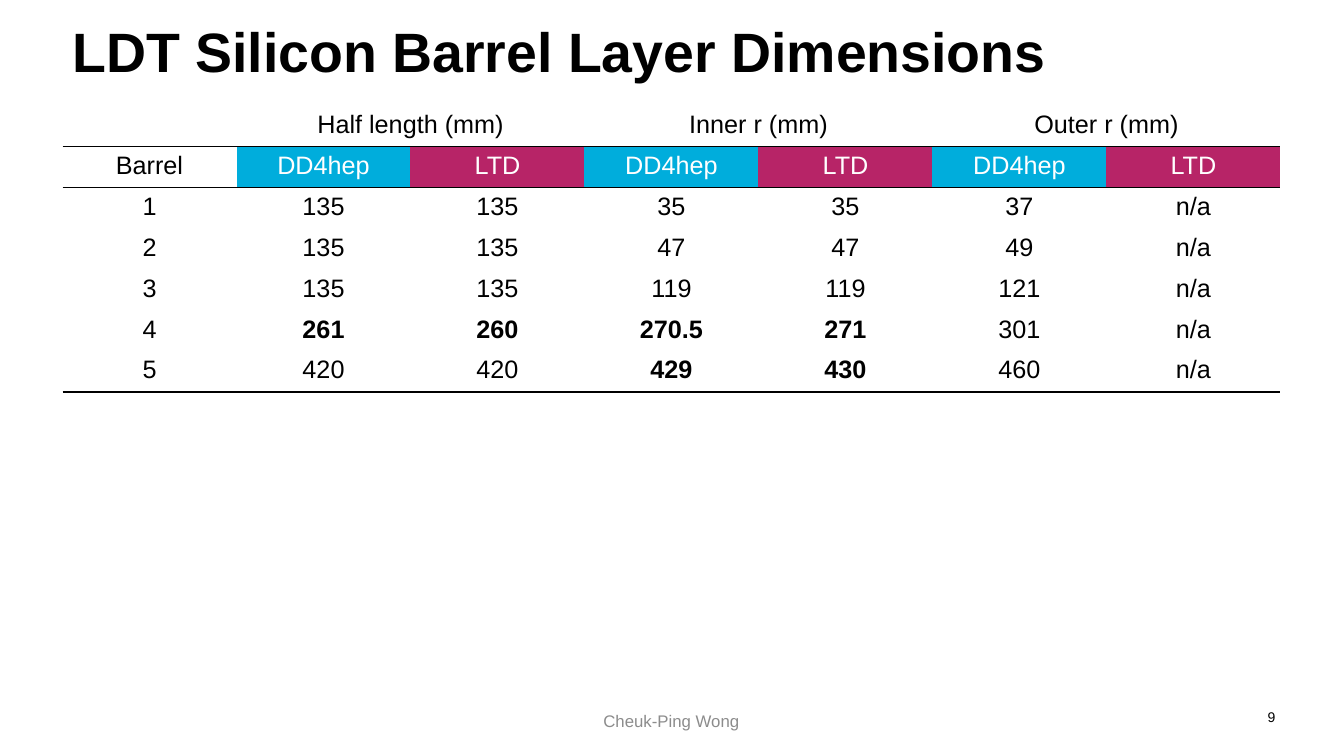
import pptx
import pptx.dml.color
import pptx.enum.text
import pptx.oxml
import pptx.oxml.ns
import pptx.util
from dataclasses import dataclass

Inches = pptx.util.Inches
Align = pptx.enum.text.PP_ALIGN
Anchor = pptx.enum.text.MSO_ANCHOR


@dataclass(frozen=True)
class Theme:
    font: str = "Arial"
    black: str = "000000"
    white: str = "FFFFFF"
    grey: str = "8C8C8C"
    blue: str = "00ADDC"
    pink: str = "B72467"
    title: float = 39.6
    body: float = 18
    foot: float = 12
    page: float = 10


THEME = Theme()
GROUPS = ["Half length (mm)", "Inner r (mm)", "Outer r (mm)"]
HEADS = ["Barrel"] + ["DD4hep", "LTD"] * len(GROUPS)
ROWS = [
    ["1", "135", "135", "35", "35", "37", "n/a"],
    ["2", "135", "135", "47", "47", "49", "n/a"],
    ["3", "135", "135", "119", "119", "121", "n/a"],
    ["4", "261", "260", "270.5", "271", "301", "n/a"],
    ["5", "420", "420", "429", "430", "460", "n/a"],
]
FILLS = {"DD4hep": THEME.blue, "LTD": THEME.pink}
RULED = {0, 1, len(ROWS) + 1}  # rows with a line below


def rgb(code):
    return pptx.dml.color.RGBColor.from_string(code)


def write(frame, text, size, color=THEME.black, align=Align.LEFT, bold=False):
    frame.text = text
    para = frame.paragraphs[0]
    para.alignment = align
    for run in para.runs:
        font = run.font
        font.name, font.size, font.bold = THEME.font, pptx.util.Pt(size), bold
        font.color.rgb = rgb(color)


def edge(cell, ruled):
    """Give the cell black lines on the ruled sides and none elsewhere."""
    props = cell._tc.get_or_add_tcPr()
    for side in "LRTB":
        paint = "<a:noFill/>"
        if side in ruled:
            paint = f'<a:solidFill><a:srgbClr val="{THEME.black}"/></a:solidFill>'
        props.append(pptx.oxml.parse_xml(
            f'<a:ln{side} {pptx.oxml.ns.nsdecls("a")} w="12700">{paint}</a:ln{side}>'))


def add_title(slide, box, text):
    title = slide.shapes.title
    title.left, title.top, title.width, title.height = box
    frame = title.text_frame
    frame.auto_size = pptx.enum.text.MSO_AUTO_SIZE.NONE
    frame.vertical_anchor = Anchor.MIDDLE
    write(frame, text, THEME.title, bold=True)
    frame.paragraphs[0].line_spacing = 0.9


def add_sizes(slide, box):
    """Place the table of barrel dimensions."""
    top = [""] + [part for group in GROUPS for part in (group, "")]
    grid = [top, HEADS] + ROWS
    table = slide.shapes.add_table(len(grid), len(HEADS), *box).table
    table.first_row = table.horz_banding = False
    for row, texts in enumerate(grid):
        for col, text in enumerate(texts):
            cell = table.cell(row, col)
            edge(cell, "T" * (row - 1 in RULED) + "B" * (row in RULED))
            fill = FILLS.get(text)
            if fill:
                cell.fill.solid()
                cell.fill.fore_color.rgb = rgb(fill)
            else:
                cell.fill.background()
            # Inner lengths and radii that differ between the models stand out.
            pair = (col - 1) // 2 * 2 + 1
            bold = row > 1 and 1 <= col <= 4 and texts[pair] != texts[pair + 1]
            write(cell.text_frame, text, THEME.body,
                  THEME.white if fill else THEME.black, Align.CENTER, bold)
    for col in range(1, len(HEADS), 2):
        table.cell(0, col).merge(table.cell(0, col + 1))


def add_note(slide, box, text, size, color, align):
    frame = slide.shapes.add_textbox(*box).text_frame
    frame.word_wrap = True
    frame.vertical_anchor = Anchor.MIDDLE
    write(frame, text, size, color, align)
    return frame


def add_foot(slide, box):
    """Place the author in the middle and the page number at the right."""
    left, top, width, height = box
    wide, slim = Inches(4.5), Inches(0.47)
    add_note(slide, (left + (width - wide) // 2, top + Inches(0.04), wide, height),
             "Cheuk-Ping Wong", THEME.foot, THEME.grey, Align.CENTER)
    page = add_note(slide, (left + width - slim, top, slim, height),
                    "9", THEME.page, THEME.black, Align.RIGHT)
    page.margin_left = page.margin_top = page.margin_bottom = 0
    page.margin_right = Inches(0.05)


def main():
    deck = pptx.Presentation()
    deck.slide_width, deck.slide_height = Inches(13.33), Inches(7.5)
    slide = deck.slides.add_slide(deck.slide_layouts[5])
    left, width = Inches(0.62), Inches(12.08)
    add_title(slide, (left, Inches(0.19), width, Inches(0.71)),
              "LDT Silicon Barrel Layer Dimensions")
    add_sizes(slide, (left, Inches(1.05), width, Inches(2.84)))
    add_foot(slide, (left, Inches(6.91), width, Inches(0.4)))
    deck.save("out.pptx")


if __name__ == "__main__":
    main()
